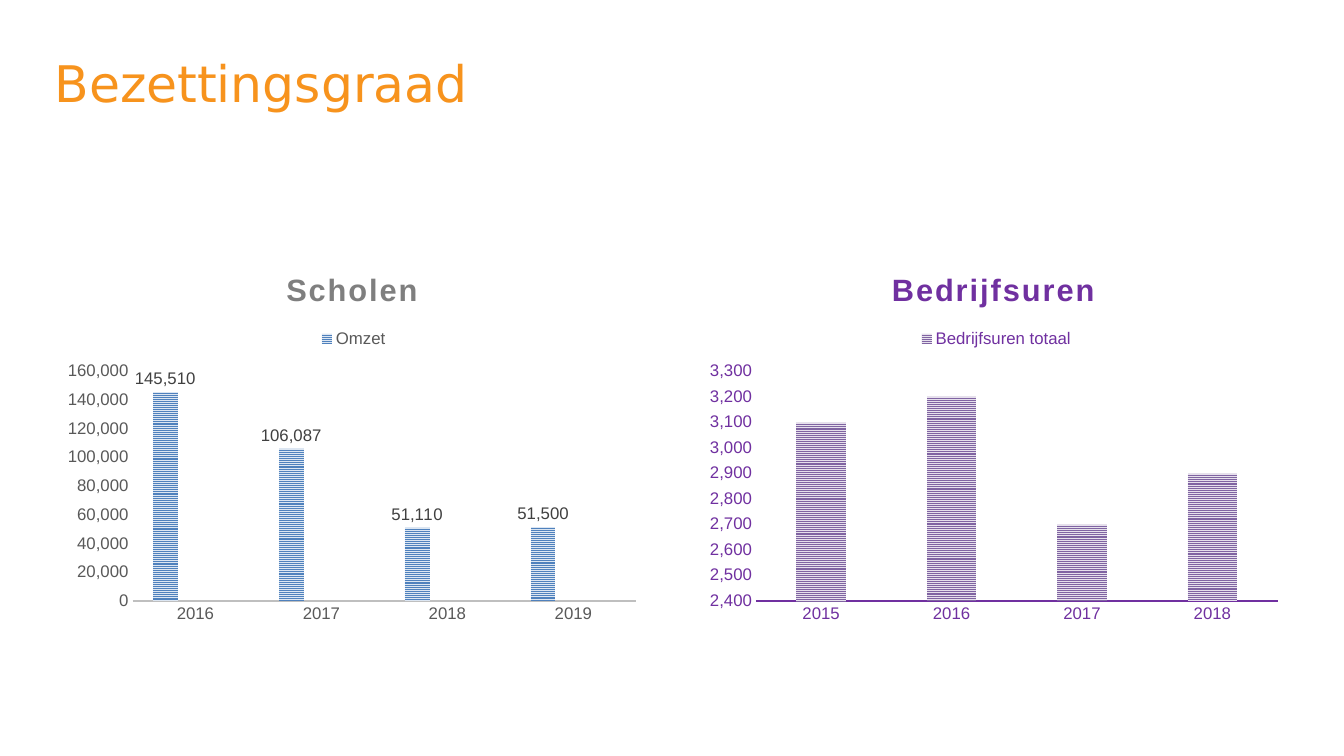
from lxml import etree
from pptx import Presentation
from pptx.chart.data import CategoryChartData
from pptx.dml.color import RGBColor
from pptx.enum.chart import XL_CHART_TYPE, XL_LABEL_POSITION, XL_LEGEND_POSITION, XL_TICK_MARK
from pptx.enum.dml import MSO_PATTERN
from pptx.enum.text import MSO_ANCHOR, MSO_AUTO_SIZE, PP_ALIGN
from pptx.oxml.ns import qn
from pptx.util import Inches, Pt

COLUMNS = XL_CHART_TYPE.COLUMN_CLUSTERED
STRIPES = MSO_PATTERN.NARROW_HORIZONTAL
NO_TICK = XL_TICK_MARK.NONE
LEGEND_TOP = XL_LEGEND_POSITION.TOP
OUTSIDE_END = XL_LABEL_POSITION.OUTSIDE_END

TITLE = "Bezettingsgraad"
EMPTY = [None] * 4
CHARTS = [
    {
        "title": "Scholen", "left": 0.55, "labels": True,
        "title_color": "7F7F7F", "text_color": "595959", "line_color": "BFBFBF",
        "years": ["2016", "2017", "2018", "2019"],
        "series": [
            ("Omzet", [145510, 106087, 51110, 51500], "4F81BD", "DCE6F2"),
            ("Series 2", EMPTY, "C0504D", "F2DCDB"),
            ("Series 3", EMPTY, "9BBB59", "EBF1DE"),
        ],
        "title_at": (0.38, 0.03), "legend_at": (0.44, 0.19),
        "plot_at": (0.13, 0.31, 0.85, 0.61),
        "scale": (0, 160000, 20000),
    },
    {
        "title": "Bedrijfsuren", "left": 6.91, "labels": False,
        "title_color": "7030A0", "text_color": "7030A0", "line_color": "7030A0",
        "years": ["2015", "2016", "2017", "2018"],
        "series": [
            ("Bedrijfsuren totaal", [3100, 3200, 2700, 2900], "8064A2", "E6E0EC"),
        ],
        "title_at": (0.32, 0.03), "legend_at": (0.37, 0.19),
        "plot_at": (0.1, 0.31, 0.88, 0.61),
        "scale": (2400, 3300, 100),
    },
]


def rgb(color):
    return RGBColor.from_string(color)


def set_font(font, size, color, name="Arial", bold=False):
    font.size = Pt(size)
    font.name = name
    font.bold = bold
    font.color.rgb = rgb(color)


def set_layout(parent, index, box, inner=False):
    for old in parent.findall(qn("c:layout")):
        parent.remove(old)
    layout = etree.Element(qn("c:layout"))
    manual = etree.SubElement(layout, qn("c:manualLayout"))
    values = [("layoutTarget", "inner")] if inner else []
    values += [("xMode", "edge"), ("yMode", "edge")]
    values += zip("xywh", box)
    for tag, value in values:
        etree.SubElement(manual, qn("c:" + tag)).set("val", str(value))
    parent.insert(index, layout)


def hide_legend_entries(legend, count):
    for i in range(1, count):
        entry = etree.Element(qn("c:legendEntry"))
        etree.SubElement(entry, qn("c:idx")).set("val", str(i))
        etree.SubElement(entry, qn("c:delete")).set("val", "1")
        legend.insert(i, entry)


def add_column_chart(slide, item):
    data = CategoryChartData(number_format="#,##0")
    data.categories = item["years"]
    for name, values, _, _ in item["series"]:
        data.add_series(name, values)
    chart = slide.shapes.add_chart(
        COLUMNS, Inches(item["left"]), Inches(2.52), Inches(5.88), Inches(3.74), data
    ).chart
    set_font(chart.font, 10, "000000")

    chart.has_title = True
    p = chart.chart_title.text_frame.paragraphs[0]
    r = p.add_run()
    r.text = item["title"]
    set_font(r.font, 22, item["title_color"], bold=True)
    r._r.get_or_add_rPr().set("spc", "150")

    chart.has_legend = True
    chart.legend.position = LEGEND_TOP
    chart.legend.include_in_layout = False
    set_font(chart.legend.font, 12, item["text_color"])

    cat, val = chart.category_axis, chart.value_axis
    for axis in (cat, val):
        axis.major_tick_mark = axis.minor_tick_mark = NO_TICK
        axis.has_major_gridlines = False
        set_font(axis.tick_labels.font, 12, item["text_color"])
    cat.format.line.color.rgb = rgb(item["line_color"])
    cat.format.line.width = Pt(1.5)
    val.format.line.fill.background()
    val.minimum_scale, val.maximum_scale, val.major_unit = item["scale"]
    val.tick_labels.number_format = "#,##0"
    val.tick_labels.number_format_is_linked = False

    plot = chart.plots[0]
    plot.gap_width = 164
    plot.overlap = -22
    plot.vary_by_categories = False
    for series, (_, _, fore, back) in zip(plot.series, item["series"]):
        fill = series.format.fill
        fill.patterned()
        fill.pattern = STRIPES
        fill.fore_color.rgb = rgb(fore)
        fill.back_color.rgb = rgb(back)
        series.invert_if_negative = False
        if item["labels"]:
            labels = series.data_labels
            labels.show_value = True
            labels.position = OUTSIDE_END
            set_font(labels.font, 12, "404040")

    root = chart.element.find(qn("c:chart"))
    set_layout(root.find(qn("c:title")), 1, item["title_at"])
    set_layout(root.find(qn("c:plotArea")), 0, item["plot_at"], inner=True)
    legend = root.find(qn("c:legend"))
    set_layout(legend, 1, item["legend_at"])
    hide_legend_entries(legend, len(item["series"]))


def main():
    prs = Presentation()
    prs.slide_width, prs.slide_height = Inches(13.33), Inches(7.5)
    slide = prs.slides.add_slide(prs.slide_layouts[5])

    title = slide.shapes.title
    title.left, title.top = Inches(0.54), Inches(0.52)
    title.width, title.height = Inches(9.73), Inches(1.53)
    tf = title.text_frame
    tf.text = TITLE
    tf.auto_size = MSO_AUTO_SIZE.NONE
    tf.vertical_anchor = MSO_ANCHOR.TOP
    tf.margin_left = tf.margin_right = tf.margin_top = tf.margin_bottom = 0
    p = tf.paragraphs[0]
    p.alignment = PP_ALIGN.LEFT
    set_font(p.runs[0].font, 36, "F7931D", "DejaVu Sans")

    for item in CHARTS:
        add_column_chart(slide, item)
    prs.save("out.pptx")


if __name__ == "__main__":
    main()
